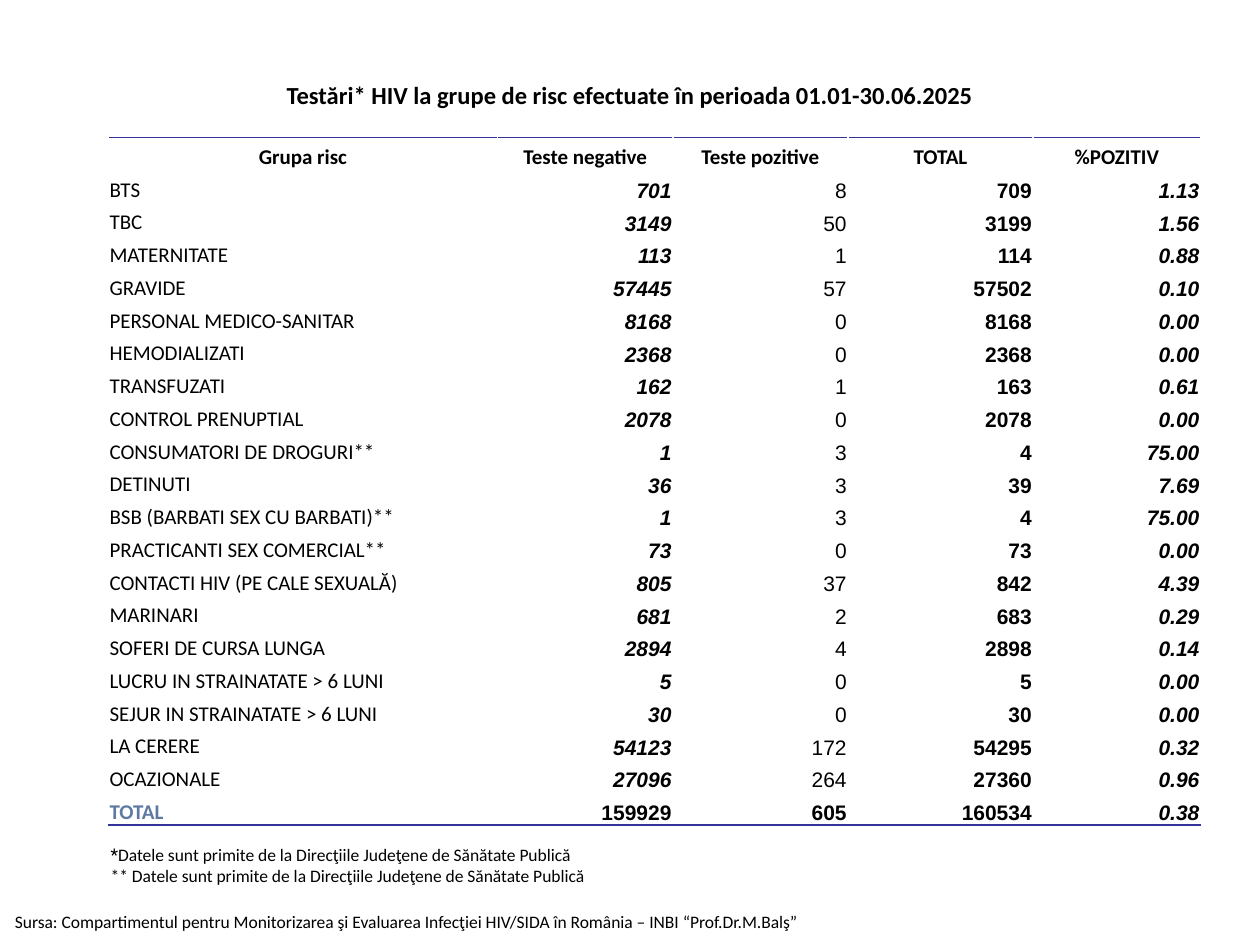
"""Build a slide with a table of HIV tests by risk group."""
from lxml import etree
from pptx import Presentation
from pptx.dml.color import RGBColor
from pptx.enum.text import MSO_ANCHOR, MSO_AUTO_SIZE, PP_ALIGN
from pptx.oxml import parse_xml
from pptx.oxml.ns import nsdecls
from pptx.util import Inches, Pt


def style(span, size, font="Calibri", color="000000", bold=False, italic=False):
    """Format one run of text."""
    span.font.size = Pt(size)
    span.font.name = font
    span.font.color.rgb = RGBColor.from_string(color)
    span.font.bold = bold
    span.font.italic = italic


def add_border(cell, side):
    """Draw a blue line on one side of a cell."""
    cell._tc.get_or_add_tcPr().append(parse_xml(
        f'<a:{side} {nsdecls("a")} w="12700"><a:solidFill>'
        f'<a:srgbClr val="333399"/></a:solidFill></a:{side}>'))


headers = ["Grupa risc", "Teste negative", "Teste pozitive", "TOTAL", "%POZITIV"]
tests = [
    ("BTS", 701, 8),
    ("TBC", 3149, 50),
    ("MATERNITATE", 113, 1),
    ("GRAVIDE", 57445, 57),
    ("PERSONAL MEDICO-SANITAR", 8168, 0),
    ("HEMODIALIZATI", 2368, 0),
    ("TRANSFUZATI", 162, 1),
    ("CONTROL PRENUPTIAL", 2078, 0),
    ("CONSUMATORI DE DROGURI**", 1, 3),
    ("DETINUTI", 36, 3),
    ("BSB (BARBATI SEX CU BARBATI)**", 1, 3),
    ("PRACTICANTI SEX COMERCIAL**", 73, 0),
    ("CONTACTI HIV (PE CALE SEXUALĂ)", 805, 37),
    ("MARINARI", 681, 2),
    ("SOFERI DE CURSA LUNGA", 2894, 4),
    ("LUCRU IN STRAINATATE > 6 LUNI", 5, 0),
    ("SEJUR IN STRAINATATE > 6 LUNI", 30, 0),
    ("LA CERERE", 54123, 172),
    ("OCAZIONALE", 27096, 264),
]
tests.append(("TOTAL", sum(row[1] for row in tests), sum(row[2] for row in tests)))
rows = [headers]
for group, negative, positive in tests:
    total = negative + positive
    rows.append([group, str(negative), str(positive), str(total),
                 f"{100 * positive / total:.2f}"])

deck = Presentation()
deck.slide_width, deck.slide_height = Inches(10), Inches(7.5)
page = deck.slides.add_slide(deck.slide_layouts[5])

source_box = page.shapes.add_textbox(Inches(0.02), Inches(7.18), Inches(6.54), Inches(0.27))
source_box.text_frame.word_wrap = False
source_box.text_frame.auto_size = MSO_AUTO_SIZE.SHAPE_TO_FIT_TEXT
source_box.text_frame.text = (
    "Sursa: Compartimentul pentru Monitorizarea şi Evaluarea Infecţiei HIV/SIDA "
    "în România – INBI “Prof.Dr.M.Balş”")
style(source_box.text_frame.paragraphs[0].runs[0], 10)

title = page.shapes.title
title.left, title.top, title.width, title.height = (
    Inches(0.5), Inches(0.3), Inches(9), Inches(0.93))
title.text_frame.text = "Testări* HIV la grupe de risc efectuate în perioada 01.01-30.06.2025"
title.text_frame.vertical_anchor = MSO_ANCHOR.MIDDLE
title_line = title.text_frame.paragraphs[0]
title_line.alignment = PP_ALIGN.CENTER
title_line.line_spacing = 0.9
style(title_line.runs[0], 14, bold=True)

note_box = page.shapes.add_textbox(Inches(0.78), Inches(6.65), Inches(6.18), Inches(0.61))
note_box.text_frame.word_wrap = True
note_box.text_frame.auto_size = MSO_AUTO_SIZE.SHAPE_TO_FIT_TEXT
note = "Datele sunt primite de la Direcţiile Judeţene de Sănătate Publică"
first_note = note_box.text_frame.paragraphs[0]
second_note = note_box.text_frame.add_paragraph()
for para, text, font in [(first_note, "*", "Roboto"), (first_note, note, "Calibri"),
                         (second_note, f"** {note}", "Calibri")]:
    span = para.add_run()
    span.text = text
    style(span, 10, font)

table_frame = page.shapes.add_table(
    len(rows), len(headers), Inches(0.86), Inches(1.09), Inches(8.67), Inches(5.47))
table = table_frame.table
table.first_row = table.horz_banding = False
for column, width in zip(table.columns, [3.09, 1.39, 1.39, 1.47, 1.33]):
    column.width = Inches(width)

last = len(rows) - 1
for row_index, values in enumerate(rows):
    table.rows[row_index].height = Inches(0.26)
    for column_index, value in enumerate(values):
        cell = table.cell(row_index, column_index)
        cell.text_frame.text = value
        cell.vertical_anchor = MSO_ANCHOR.BOTTOM
        cell.margin_left = cell.margin_right = cell.margin_top = Inches(0.01)
        cell.margin_bottom = 0
        if row_index == 0:
            add_border(cell, "lnT")
        if row_index == last:
            add_border(cell, "lnB")
        cell.fill.background()
        para = cell.text_frame.paragraphs[0]
        span = para.runs[0]
        if row_index == 0:
            para.alignment = PP_ALIGN.CENTER
            style(span, 12, bold=True)
        elif column_index == 0:
            para.alignment = PP_ALIGN.LEFT
            style(span, 12, color="5E7AA2" if row_index == last else "000000",
                  bold=row_index == last)
        else:
            para.alignment = PP_ALIGN.RIGHT
            style(span, 12, "Arial", bold=column_index != 2 or row_index == last,
                  italic=column_index == 4 or (column_index == 1 and row_index != last))

deck.save("out.pptx")
